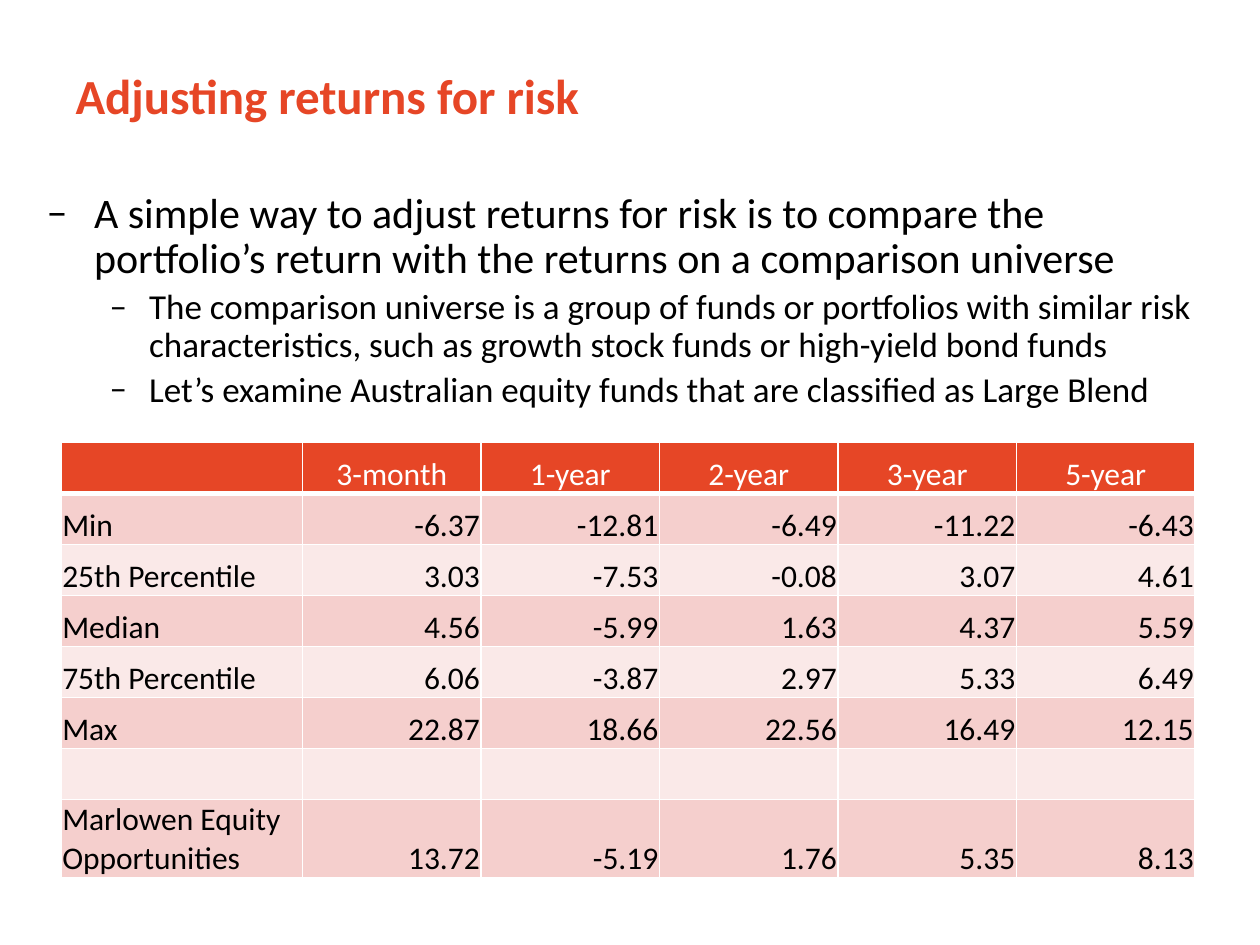
from lxml.etree import SubElement
from pptx import Presentation
from pptx.dml.color import RGBColor
from pptx.enum.text import MSO_ANCHOR, MSO_AUTO_SIZE, PP_ALIGN
from pptx.oxml.ns import qn
from pptx.util import Pt

INK = {"head": "E64626", "dark": "F5CFCD", "pale": "FAE9E8",
       "text": "000000", "white": "FFFFFF"}

TITLE = "Adjusting returns for risk"
# Level and text of each list item
ITEMS = [
    (0, "A simple way to adjust returns for risk is to compare the "
        "portfolio’s return with the returns on a comparison universe"),
    (1, "The comparison universe is a group of funds or portfolios with "
        "similar risk characteristics, such as growth stock funds or "
        "high-yield bond funds"),
    (1, "Let’s examine Australian equity funds that are classified as "
        "Large Blend"),
]
ROWS = [
    ["", "3-month", "1-year", "2-year", "3-year", "5-year"],
    ["Min", "-6.37", "-12.81", "-6.49", "-11.22", "-6.43"],
    ["25th Percentile", "3.03", "-7.53", "-0.08", "3.07", "4.61"],
    ["Median", "4.56", "-5.99", "1.63", "4.37", "5.59"],
    ["75th Percentile", "6.06", "-3.87", "2.97", "5.33", "6.49"],
    ["Max", "22.87", "18.66", "22.56", "16.49", "12.15"],
    [""] * 6,
    ["Marlowen Equity Opportunities", "13.72", "-5.19", "1.76", "5.35", "8.13"],
]


class Deck:
    font = "Calibri"
    # Size, left indent and hanging indent by list level
    levels = [(24, 27, 27), (20, 58.5, 22.5)]

    def __init__(self, show):
        self.slide = show.slides.add_slide(show.slide_layouts[1])

    def place(self, shape, box):
        shape.left, shape.top, shape.width, shape.height = map(Pt, box)
        shape.text_frame.auto_size = MSO_AUTO_SIZE.NONE
        return shape.text_frame

    def style(self, para, size, ink, bold=False):
        for run in para.runs:
            run.font.name, run.font.size, run.font.bold = self.font, Pt(size), bold
            run.font.color.rgb = RGBColor.from_string(INK[ink])

    def title(self, text, box):
        frame = self.place(self.slide.shapes.title, box)
        frame.text = text
        frame.vertical_anchor = MSO_ANCHOR.MIDDLE
        para = frame.paragraphs[0]
        para.alignment = PP_ALIGN.LEFT
        self.style(para, 28, "head", True)

    def bullets(self, items, box):
        frame = self.place(self.slide.placeholders[1], box)
        frame.text = "\n".join(text for _, text in items)
        for para, (level, _) in zip(frame.paragraphs, items):
            size, left, hang = self.levels[level]
            para.level, para.line_spacing = level, 0.9
            self.style(para, size, "text")
            props = para._p.get_or_add_pPr()
            props.set("marL", str(Pt(left)))
            props.set("indent", str(-Pt(hang)))
            SubElement(props, qn("a:buFont"), typeface=self.font)
            SubElement(props, qn("a:buChar"), char="–")

    def borders(self, cell, top, bottom):
        props = cell._tc.get_or_add_tcPr()
        for side, width in zip("LRTB", (1, 1, top, bottom)):
            line = SubElement(props, qn(f"a:ln{side}"), w=str(Pt(width)))
            fill = SubElement(line, qn("a:solidFill"))
            SubElement(fill, qn("a:srgbClr"), val=INK["white"])

    def cell(self, cell, text, row, col):
        head = row == 0
        self.borders(cell, 3 if row == 1 else 1, 3 if head else 1)
        cell.fill.solid()
        band = "head" if head else "dark" if row % 2 else "pale"
        cell.fill.fore_color.rgb = RGBColor.from_string(INK[band])
        cell.margin_left = cell.margin_right = cell.margin_top = Pt(0.7)
        cell.margin_bottom = 0
        cell.vertical_anchor = MSO_ANCHOR.BOTTOM
        cell.text = text
        para = cell.text_frame.paragraphs[0]
        para.alignment = (PP_ALIGN.CENTER if head else
                          PP_ALIGN.RIGHT if col else PP_ALIGN.LEFT)
        self.style(para, 18, "white" if head else "text")

    def table(self, rows, left, top, widths, height):
        box = (left, top, sum(widths), height * len(rows))
        table = self.slide.shapes.add_table(
            len(rows), len(widths), *map(Pt, box)).table
        table.first_row = table.horz_banding = False
        for col, width in zip(table.columns, widths):
            col.width = Pt(width)
        for r, row in enumerate(rows):
            table.rows[r].height = Pt(height)
            for c, text in enumerate(row):
                self.cell(table.cell(r, c), text, r, c)


def main():
    show = Presentation()
    show.slide_width, show.slide_height = Pt(720), Pt(540)
    deck = Deck(show)
    # Heading and list
    deck.title(TITLE, (36, 9.5, 648, 90))
    deck.bullets(ITEMS, (19.5, 106, 682, 402.5))
    # Table of returns
    deck.table(ROWS, 34.9, 252.9, [138] + [102] * 5, 29.15)
    show.save("out.pptx")


if __name__ == "__main__":
    main()
